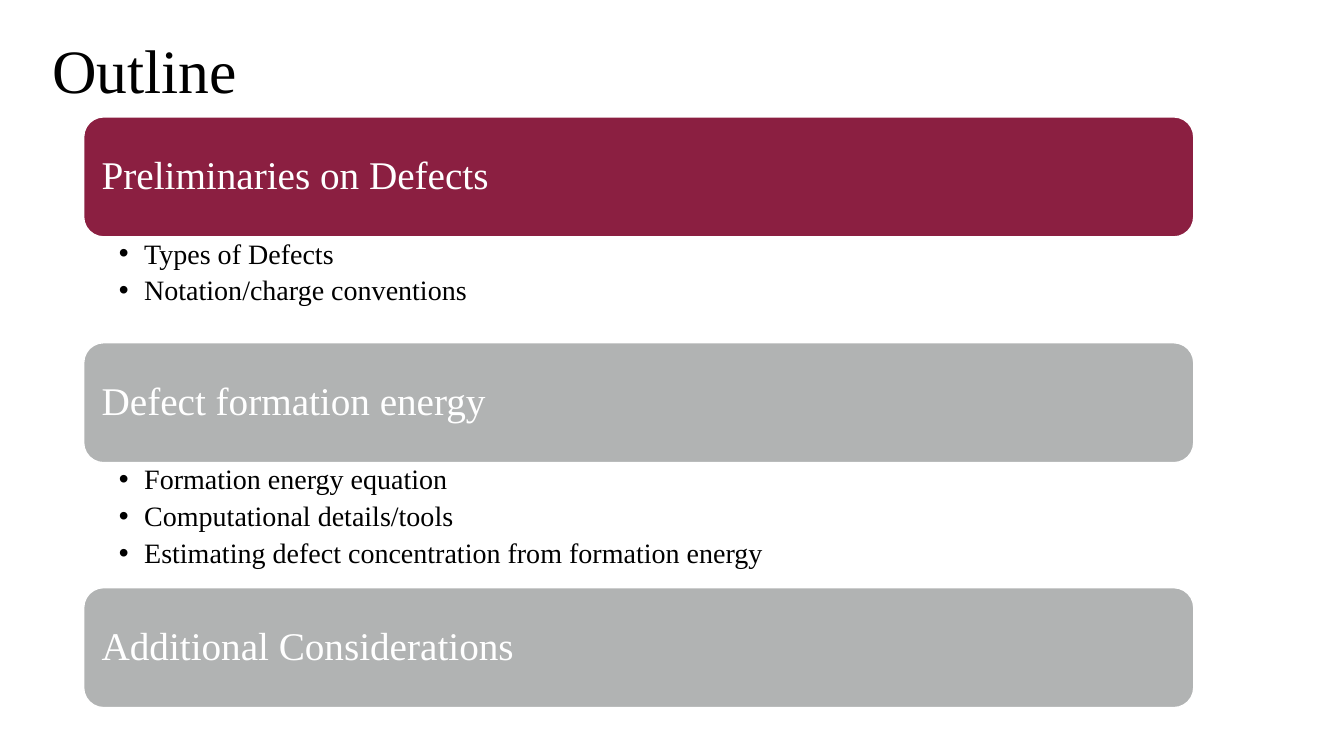
from lxml.etree import SubElement
from pptx import Presentation
from pptx.dml.color import RGBColor
from pptx.enum.shapes import MSO_SHAPE
from pptx.enum.text import MSO_ANCHOR, PP_ALIGN
from pptx.oxml.ns import qn
from pptx.util import Inches, Pt

FONT = "Times New Roman"
BLACK, WHITE, MAROON, GREY = "000000", "FFFFFF", "8B1F41", "B1B3B3"
LEFT, TOP, WIDTH, BAR_HEIGHT = 0.83, 1.16, 11.01, 1.19

# Heading, bar colour, bullet points, height of the bullet area
SECTIONS = [
    ("Preliminaries on Defects", MAROON,
     ["Types of Defects", "Notation/charge conventions"], 1.05),
    ("Defect formation energy", GREY,
     ["Formation energy equation", "Computational details/tools",
      "Estimating defect concentration from formation energy"], 1.24),
    ("Additional Considerations", GREY, [], 0),
]


def color(value):
    return RGBColor.from_string(value)


def set_all(target, values):
    for name, value in values.items():
        setattr(target, name, value)


def write(para, text, size, text_color, **layout):
    para.text = text
    set_all(para, {"line_spacing": 0.9, "alignment": PP_ALIGN.LEFT, **layout})
    set_all(para.font, {"name": FONT, "size": Pt(size)})
    para.font.color.rgb = color(text_color)


def add_bullet(para):
    properties = para._p.get_or_add_pPr()
    properties.set("marL", str(Inches(0.25)))
    properties.set("indent", str(Inches(-0.25)))
    SubElement(properties, qn("a:buFont"), typeface="Arial")
    SubElement(properties, qn("a:buChar"), char="•")


def add_title(page, left, top, width, height):
    box = page.shapes.add_textbox(*map(Inches, (left, top, width, height)))
    set_all(box.text_frame, {"word_wrap": True, "vertical_anchor": MSO_ANCHOR.MIDDLE})
    write(box.text_frame.paragraphs[0], "Outline", 44, BLACK)


def add_heading_bar(page, heading, fill, left, top, width, height):
    bar = page.shapes.add_shape(MSO_SHAPE.ROUNDED_RECTANGLE,
                                *map(Inches, (left, top, width, height)))
    bar.shadow.inherit = False
    bar.fill.solid()
    bar.fill.fore_color.rgb = color(fill)
    bar.line.color.rgb = color(WHITE)
    bar.line.width = Pt(1)
    inset = Inches(0.12)
    set_all(bar.text_frame, {
        "word_wrap": True, "vertical_anchor": MSO_ANCHOR.MIDDLE,
        "margin_left": inset, "margin_right": inset,
        "margin_top": inset, "margin_bottom": inset})
    write(bar.text_frame.paragraphs[0], heading, 28, WHITE)


def add_points(page, points, left, top, width, height):
    box = page.shapes.add_textbox(*map(Inches, (left, top, width, height)))
    frame = box.text_frame
    set_all(frame, {
        "word_wrap": True, "vertical_anchor": MSO_ANCHOR.TOP,
        "margin_left": Inches(0.35), "margin_right": Inches(0.16),
        "margin_top": Inches(0.03), "margin_bottom": Inches(0.03)})
    for index, point in enumerate(points):
        para = frame.add_paragraph() if index else frame.paragraphs[0]
        add_bullet(para)
        write(para, point, 20, BLACK, level=1, space_after=Pt(4.6))


def add_outline(page, left, top, width):
    """Stack the heading bars, each followed by its bullet points."""
    for heading, fill, points, points_height in SECTIONS:
        add_heading_bar(page, heading, fill, left, top, width, BAR_HEIGHT)
        top += BAR_HEIGHT
        if points:
            add_points(page, points, left, top, width, points_height)
            top += points_height


def main():
    deck = Presentation()
    set_all(deck, {"slide_width": Inches(13.33), "slide_height": Inches(7.5)})
    page = deck.slides.add_slide(deck.slide_layouts[6])
    add_title(page, 0.42, 0, 11.5, 1.45)
    add_outline(page, LEFT, TOP, WIDTH)
    deck.save("out.pptx")


if __name__ == "__main__":
    main()
